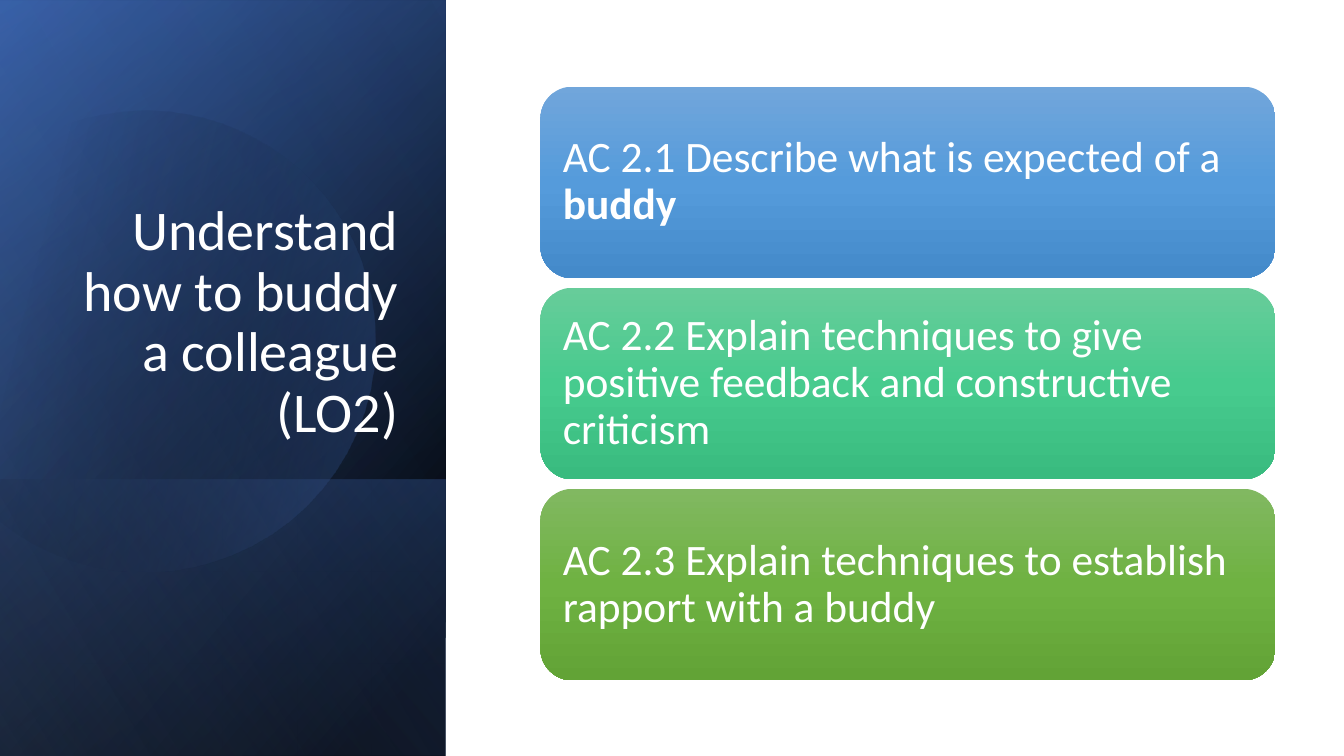
from dataclasses import dataclass
from math import cos, radians, sin

from lxml.etree import SubElement
from pptx import Presentation
from pptx.dml.color import RGBColor
from pptx.enum.shapes import MSO_SHAPE
from pptx.enum.text import MSO_ANCHOR, MSO_AUTO_SIZE, PP_ALIGN
from pptx.oxml.ns import qn
from pptx.util import Inches, Pt


@dataclass(frozen=True)
class Theme:
    font: str = "Calibri"
    title_size: int = 40
    card_size: int = 31
    text: str = "FFFFFF"
    black: str = "000000"
    accent: str = "4472C4"
    dark: str = "2F5597"
    light: str = "8FAADC"
    blue: tuple = ("71A6DB", "559BDB", "448ACA")
    teal: tuple = ("67CC9A", "47CB8E", "39BB7F")
    green: tuple = ("81B861", "6FB242", "62A336")


THEME = Theme()

# Each gradient stop is (position %, colour, opacity %).
# Each layer is (left, top, width, height, angle, stops).
PANEL_LAYERS = [
    (-1.54, 1.54, 7.5, 4.42, 50, [(8, THEME.black, 100), (100, THEME.dark, 100)]),
    (-1.54, 1.55, 7.5, 4.42, 30, [(0, THEME.black, 0), (99, THEME.accent, 46)]),
    (0.84, 3.92, 2.74, 4.42, 130, [(2, THEME.accent, 29), (100, THEME.black, 30)]),
]
PANEL_GLOW = (-1.54, 1.54, 7.5, 4.42, 120,
              [(0, THEME.black, 0), (99, THEME.light, 11)])

DISC_CENTER = (1.585, 3.345)
DISC_ROTATION = 343.9
DISC_STOPS = [(29, THEME.black, 0), (100, THEME.accent, 43)]
DISC_START = (1.49, 1.1)
# Three points make a curve, one point makes a straight edge.
DISC_EDGES = [
    [(2.46, 1.12), (3.35, 1.77), (3.63, 2.75)],
    [(3.98, 3.97), (3.28, 5.23), (2.07, 5.58)],
    [(1.31, 5.8), (0.53, 5.61), (-0.03, 5.14)],
    [(-0.15, 5.03)],
    [(-0.15, 1.75)],
    [(0, 1.61)],
    [(0.23, 1.42), (0.5, 1.28), (0.8, 1.19)],
    [(1.03, 1.13), (1.26, 1.1), (1.49, 1.1)],
]

CARDS = [
    (THEME.blue, [("AC 2.1 Describe what is expected of a ", False), ("buddy", True)]),
    (THEME.teal, [("AC 2.2 Explain techniques to give positive feedback "
                   "and constructive criticism", False)]),
    (THEME.green, [("AC 2.3 Explain techniques to establish rapport with a buddy",
                    False)]),
]
CARD_LEFT, CARD_TOP, CARD_WIDTH, CARD_HEIGHT = 5.36, 0.86, 7.29, 1.9
CARD_PITCH = (4.85 - CARD_TOP) / 2


def set_all(target, values):
    for name, value in values.items():
        setattr(target, name, value)


def paint(shape, stops, angle):
    """Fill with a linear gradient, without outline or shadow."""
    shape.shadow.inherit = False
    shape.line.fill.background()
    shape.fill.gradient()
    grad = shape._element.spPr.find(qn("a:gradFill"))
    for child in list(grad):
        grad.remove(child)
    grad.set("rotWithShape", "1")
    stop_list = SubElement(grad, qn("a:gsLst"))
    for position, color, opacity in stops:
        stop = SubElement(stop_list, qn("a:gs"), pos=str(position * 1000))
        rgb = SubElement(stop, qn("a:srgbClr"), val=color)
        if opacity < 100:
            SubElement(rgb, qn("a:alpha"), val=str(opacity * 1000))
    SubElement(grad, qn("a:lin"), ang=str(angle * 60000), scaled="0")


def format_run(r, size, bold=False):
    set_all(r.font, {"name": THEME.font, "size": Pt(size), "bold": bold})
    r.font.color.rgb = RGBColor.from_string(THEME.text)


def add_layer(s, left, top, width, height, angle, stops):
    """Add a mirrored rectangle turned on its side."""
    layer = s.shapes.add_shape(MSO_SHAPE.RECTANGLE, Inches(left), Inches(top),
                               Inches(width), Inches(height))
    layer.rotation = 90
    layer._element.spPr.xfrm.set("flipH", "1")
    paint(layer, stops, angle)


def bezier(points, t):
    weights = ((1 - t) ** 3, 3 * t * (1 - t) ** 2, 3 * t * t * (1 - t), t ** 3)
    return tuple(sum(w * p[axis] for w, p in zip(weights, points)) for axis in (0, 1))


def unrotate(point):
    """Turn a point back to where it lies before the disc is rotated."""
    angle = radians(-DISC_ROTATION)
    cx, cy = DISC_CENTER
    dx, dy = point[0] - cx, point[1] - cy
    return (Inches(cx + dx * cos(angle) - dy * sin(angle)),
            Inches(cy + dx * sin(angle) + dy * cos(angle)))


def add_disc(s, steps=16):
    outline = [DISC_START]
    for edge in DISC_EDGES:
        if len(edge) == 1:
            outline += edge
        else:
            curve = [outline[-1], *edge]
            outline += [bezier(curve, i / steps) for i in range(1, steps + 1)]
    points = [unrotate(point) for point in outline]
    builder = s.shapes.build_freeform(*points[0])
    builder.add_line_segments(points[1:], close=True)
    disc = builder.convert_to_shape()
    disc.rotation = DISC_ROTATION
    paint(disc, DISC_STOPS, 30)


def add_title(s, text):
    title = s.shapes.title
    set_all(title, {"left": Inches(0.64), "top": Inches(1.84),
                    "width": Inches(3.41), "height": Inches(2.62)})
    title._element.getparent().append(title._element)  # in front of the panel
    tf = title.text_frame
    set_all(tf, {"word_wrap": True, "auto_size": MSO_AUTO_SIZE.NONE,
                 "vertical_anchor": MSO_ANCHOR.BOTTOM})
    p = tf.paragraphs[0]
    set_all(p, {"alignment": PP_ALIGN.RIGHT, "line_spacing": 0.9})
    r = p.add_run()
    r.text = text
    format_run(r, THEME.title_size)


def add_card(s, top, colors, runs):
    card = s.shapes.add_shape(MSO_SHAPE.ROUNDED_RECTANGLE, Inches(CARD_LEFT),
                              Inches(top), Inches(CARD_WIDTH), Inches(CARD_HEIGHT))
    paint(card, [(50 * i, color, 100) for i, color in enumerate(colors)], 90)
    tf = card.text_frame
    set_all(tf, {"word_wrap": True, "vertical_anchor": MSO_ANCHOR.MIDDLE})
    for side in ("left", "top", "right", "bottom"):
        setattr(tf, f"margin_{side}", Inches(0.13))
    p = tf.paragraphs[0]
    set_all(p, {"alignment": PP_ALIGN.LEFT, "line_spacing": 0.9})
    for text, bold in runs:
        r = p.add_run()
        r.text = text
        format_run(r, THEME.card_size, bold)


def main():
    prs = Presentation()
    set_all(prs, {"slide_width": Inches(13.33), "slide_height": Inches(7.5)})
    s = prs.slides.add_slide(prs.slide_layouts[5])
    for layer in PANEL_LAYERS:
        add_layer(s, *layer)
    add_disc(s)
    add_layer(s, *PANEL_GLOW)
    add_title(s, "Understand how to buddy a colleague (LO2)")
    for i, (colors, runs) in enumerate(CARDS):
        add_card(s, CARD_TOP + i * CARD_PITCH, colors, runs)
    prs.save("out.pptx")


if __name__ == "__main__":
    main()
